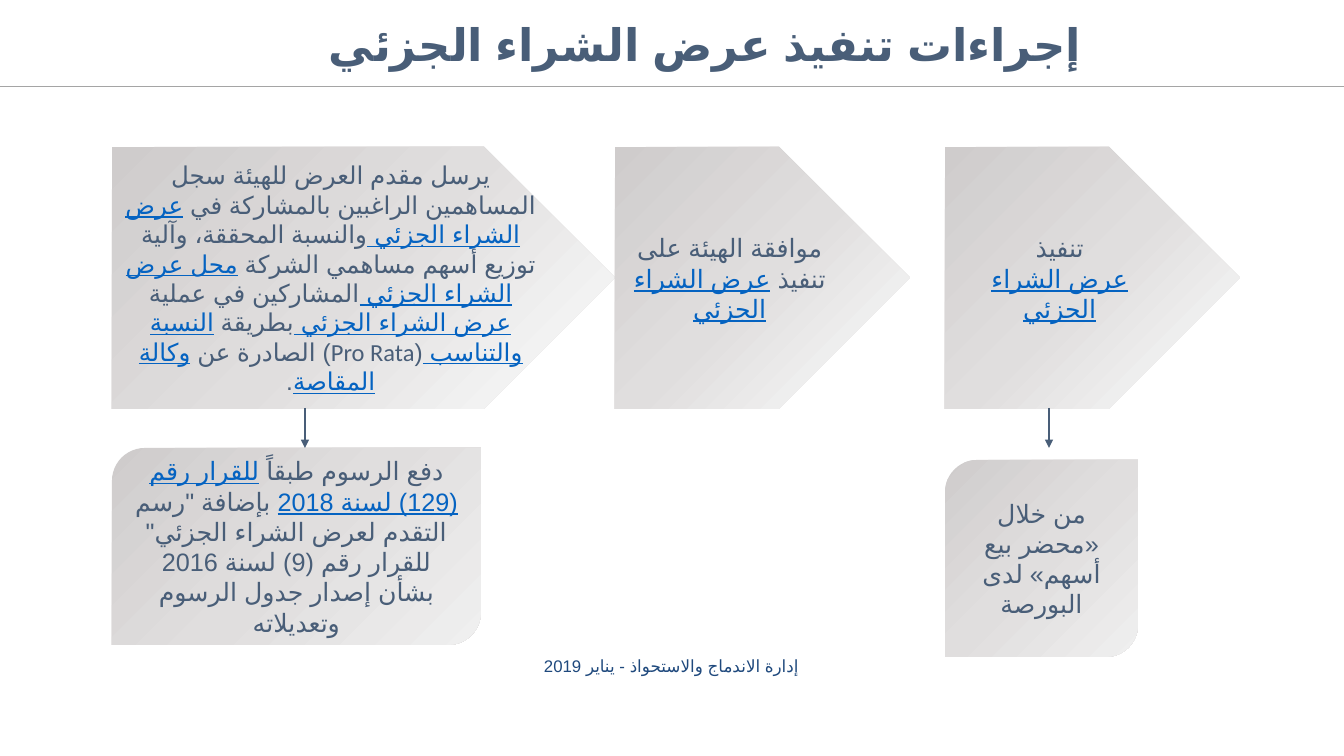
import pptx
import pptx.dml.color
import pptx.enum.lang
import pptx.enum.shapes
import pptx.enum.text
import pptx.oxml
import pptx.oxml.ns
import pptx.util

PX = 914400 / 100.8
SLATE, NAVY, LINK, GREY = "495E78", "1F497D", "0563C1", "A5A5A5"
SHAPE = pptx.enum.shapes.MSO_SHAPE
ALIGN = pptx.enum.text.PP_ALIGN
ANCHOR = pptx.enum.text.MSO_ANCHOR
ARABIC = pptx.enum.lang.MSO_LANGUAGE_ID.ARABIC_EGYPT
NS = pptx.oxml.ns.nsdecls("a")
CARD_STOPS = [(0, "CFCCCC"), (50, "E0DEDE"), (100, "EFEFEF")]
PLATE_STOPS = CARD_STOPS[:2] + [(83, "F2F2F2")] + CARD_STOPS[2:]

# Each paragraph alternates plain and linked runs, starting with plain.
SEND = [["يرسل مقدم العرض للهيئة سجل المساهمين الراغبين بالمشاركة في ",
         "عرض الشراء الجزئي ",
         "والنسبة المحققة، وآلية توزيع أسهم مساهمي الشركة ",
         "محل عرض الشراء الجزئي ",
         "المشاركين في عملية ",
         "عرض الشراء الجزئي ",
         "بطريقة ",
         "النسبة والتناسب ",
         "(Pro Rata) الصادرة عن ",
         "وكالة المقاصة",
         "."]]
AGREE = [["موافقة الهيئة على تنفيذ ", "عرض الشراء الجزئي"]]
CARRY = [["تنفيذ"], ["", "عرض الشراء الجزئي"]]
FEES = [["دفع الرسوم طبقاً ", "للقرار رقم (129) لسنة 2018",
         " بإضافة \"رسم التقدم لعرض الشراء الجزئي\" للقرار رقم (9) لسنة 2016 "
         "بشأن إصدار جدول الرسوم وتعديلاته"]]
SALE = [["من خلال «محضر بيع أسهم» لدى البورصة"]]


def px(n):
    return pptx.util.Emu(round(n * PX))


def color(code):
    return pptx.dml.color.RGBColor.from_string(code)


def style(run, size, tint, bold=False, line=False):
    font = run.font
    font.name = "Calibri"
    font.size = pptx.util.Pt(size)
    font.color.rgb = color(tint)
    font.bold = bold
    font.underline = line
    font.language_id = ARABIC
    # Arabic letters take the complex-script face.
    run._r.rPr.find(pptx.oxml.ns.qn("a:latin")).addnext(
        pptx.oxml.parse_xml(f'<a:cs {NS} typeface="Arial"/>'))


def set_rtl(para):
    para._p.get_or_add_pPr().set("rtl", "1")


def label(slide, box, text, size, tint, align, anchor, bold=False, rtl=False):
    """One line of text in a plain box."""
    frame = slide.shapes.add_textbox(*map(px, box)).text_frame
    frame.word_wrap = True
    frame.vertical_anchor = anchor
    frame.text = text
    para = frame.paragraphs[0]
    para.alignment = align
    para.line_spacing = 0.9
    if rtl:
        set_rtl(para)
    style(para.runs[0], size, tint, bold)


def shade(shape, stops):
    """Diagonal gradient, dark at the top left."""
    marks = "".join(f'<a:gs pos="{pos * 1000}"><a:srgbClr val="{tint}"/></a:gs>'
                    for pos, tint in stops)
    grad = pptx.oxml.parse_xml(
        f'<a:gradFill {NS} rotWithShape="1"><a:gsLst>{marks}</a:gsLst>'
        '<a:lin ang="2700000" scaled="0"/></a:gradFill>')
    shape._element.spPr.find(pptx.oxml.ns.qn("a:prstGeom")).addnext(grad)


def panel(slide, kind, box, stops, paras, size=18, rtl=False):
    """A shaded shape with centred text."""
    shape = slide.shapes.add_shape(kind, *map(px, box))
    shape.shadow.inherit = False
    shape.line.fill.background()
    shade(shape, stops)
    frame = shape.text_frame
    frame.word_wrap = True
    frame.vertical_anchor = ANCHOR.MIDDLE
    for i, parts in enumerate(paras):
        para = frame.add_paragraph() if i else frame.paragraphs[0]
        para.alignment = ALIGN.CENTER
        if rtl:
            set_rtl(para)
        for j, part in enumerate(parts):
            if part:
                run = para.add_run()
                run.text = part
                linked = j % 2 == 1
                style(run, size, LINK if linked else SLATE, line=linked)


def rule(slide, start, end, tint, width, arrow=False):
    """A straight line, with an arrowhead if asked."""
    line = slide.shapes.add_connector(
        pptx.enum.shapes.MSO_CONNECTOR.STRAIGHT, *map(px, start + end))
    line.line.color.rgb = color(tint)
    line.line.width = pptx.util.Pt(width)
    if arrow:
        line.line._get_or_add_ln().append(
            pptx.oxml.parse_xml(f'<a:tailEnd {NS} type="triangle"/>'))
    line._element.spPr.append(pptx.oxml.parse_xml(f"<a:effectLst {NS}/>"))


def head(slide, x, y, w, h):
    label(slide, (x + 84, y + 22, 1008, 54), "إجراءات تنفيذ عرض الشراء الجزئي",
          32, SLATE, ALIGN.RIGHT, ANCHOR.BOTTOM, bold=True)
    rule(slide, (x, y + h), (x + w, y + h), GREY, 0.5)


def flow(slide, x, y, h):
    """Three steps, two of them with a card below."""
    last = x + 833
    for left, wide, paras, size, rtl in [(x, 503, SEND, 17.5, True),
                                         (x + 503, 295, AGREE, 18, False),
                                         (last, 295, CARRY, 18, False)]:
        panel(slide, SHAPE.PENTAGON, (left, y, wide, h), PLATE_STOPS,
              paras, size, rtl)
    base = y + h
    for left, top, wide, paras, mid in [(x, base + 39, 369, FEES, x + 193),
                                        (last, base + 51, 193, SALE, last + 104)]:
        panel(slide, SHAPE.ROUND_2_DIAG_RECTANGLE, (left, top, wide, 197),
              CARD_STOPS, paras)
        rule(slide, (mid, base - 1), (mid, base + 39), SLATE, 1.5, arrow=True)


def foot(slide, x, y, w, h):
    label(slide, (x, y, w, h), "إدارة الاندماج والاستحواذ - يناير 2019",
          12, NAVY, ALIGN.CENTER, ANCHOR.TOP, rtl=True)


def main():
    deck = pptx.Presentation()
    deck.slide_width, deck.slide_height = px(1344), px(756)
    slide = deck.slides.add_slide(deck.slide_layouts[6])
    head(slide, 0, 0, 1344, 86)
    flow(slide, 112, 147, 262)
    foot(slide, 140, 653, 1063, 64)
    deck.save("out.pptx")


if __name__ == "__main__":
    main()
